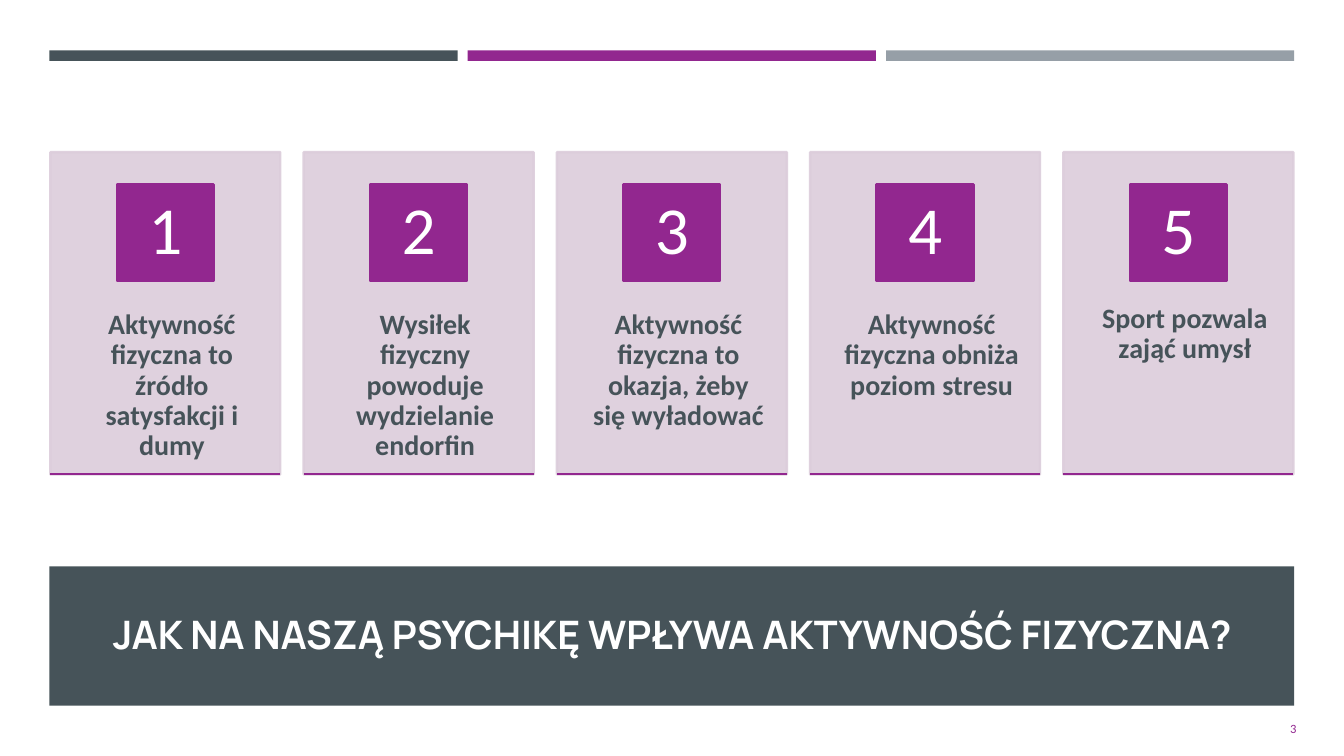
"""Build a slide with five numbered cards on how physical activity affects the mind."""
from lxml.etree import SubElement
from pptx import Presentation
from pptx.dml.color import RGBColor
from pptx.enum.shapes import MSO_CONNECTOR as Connector, MSO_SHAPE as Shape
from pptx.enum.text import MSO_ANCHOR as Anchor, PP_ALIGN as Align
from pptx.oxml.ns import qn
from pptx.util import Pt

SLATE, PURPLE, GREY, LILAC, WHITE = "465359", "92278F", "969FA7", "DCCDDB", "FFFFFF"


def panel(left, top, width, height, color, line_width=0):
    shape = slide.shapes.add_shape(Shape.RECTANGLE, Pt(left), Pt(top), Pt(width), Pt(height))
    shape.shadow.inherit = False
    shape.fill.solid()
    shape.fill.fore_color.rgb = RGBColor.from_string(color)
    if line_width:
        shape.line.color.rgb = RGBColor.from_string(color)
        shape.line.width = Pt(line_width)
    else:
        shape.line.fill.background()
    return shape


def write(shape, text, color, insets, anchor, align, spacing=1.0, **font_values):
    frame = shape.text_frame
    frame.word_wrap = True
    frame.vertical_anchor = anchor
    for side, inset in zip(("left", "top", "right", "bottom"), insets):
        setattr(frame, f"margin_{side}", Pt(inset))
    paragraph = frame.paragraphs[0]
    paragraph.text = text
    paragraph.alignment = align
    paragraph.line_spacing = spacing
    paragraph.font.color.rgb = RGBColor.from_string(color)
    for name, value in font_values.items():
        setattr(paragraph.font, name, value)


deck = Presentation()
deck.slide_width, deck.slide_height = Pt(960), Pt(540)
slide = deck.slides.add_slide(deck.slide_layouts[6])

panel(35.3, 404.6, 889.2, 99.4, SLATE)
title = slide.shapes.add_textbox(Pt(46), Pt(414.7), Pt(868.3), Pt(75.6))
write(title, "JAK NA NASZĄ PSYCHIKĘ WPŁYWA AKTYWNOŚĆ FIZYCZNA?", WHITE, (7.2, 3.6, 7.2, 3.6),
      Anchor.MIDDLE, Align.CENTER, name="Manrope", size=Pt(28), bold=True)

for index, color in enumerate((SLATE, PURPLE, GREY)):
    panel(35.3 + 298.8 * index, 36, 291.6, 7.5, color)

page_number = slide.shapes.add_textbox(Pt(850.3), Pt(506.2), Pt(82.8), Pt(28.8))
write(page_number, "3", PURPLE, (7.2, 3.6, 7.2, 3.6), Anchor.MIDDLE, Align.RIGHT,
      name="Calibri", size=Pt(9))

benefits = (
    "Aktywność fizyczna to źródło satysfakcji i dumy",
    "Wysiłek fizyczny powoduje wydzielanie endorfin",
    "Aktywność fizyczna to okazja, żeby\vsię wyładować",
    "Aktywność fizyczna obniża poziom stresu",
    "Sport pozwala zająć umysł",
)
card_width, card_pitch, badge_size = 164.2, 180.9, 69.1
for index, benefit in enumerate(benefits):
    left = 36 + card_pitch * index
    card = panel(left, 108.7, card_width, 230.2, LILAC, 1.75)
    for tint in card.element.spPr.iter(qn("a:srgbClr")):
        SubElement(tint, qn("a:alpha"), val="90000")

    caption = slide.shapes.add_textbox(Pt(left), Pt(195.8), Pt(card_width), Pt(138.2))
    write(caption, benefit, SLATE, (22.3, 25.9, 13, 25.9), Anchor.TOP, Align.CENTER, 0.9,
          name="Calibri", size=Pt(20), bold=True)

    badge = panel(left + (card_width - badge_size) / 2, 131.8, badge_size, badge_size, PURPLE, 1.75)
    write(badge, str(index + 1), WHITE, (5, 0.7, 5, 0.7), Anchor.MIDDLE, Align.CENTER, 0.9,
          name="Calibri", size=Pt(48))

    underline = slide.shapes.add_connector(
        Connector.STRAIGHT, Pt(left), Pt(338.6), Pt(left + card_width), Pt(338.6))
    underline.line.color.rgb = RGBColor.from_string(PURPLE)
    underline.line.width = Pt(1.75)
    SubElement(underline.element.spPr, qn("a:effectLst"))

deck.save("out.pptx")
